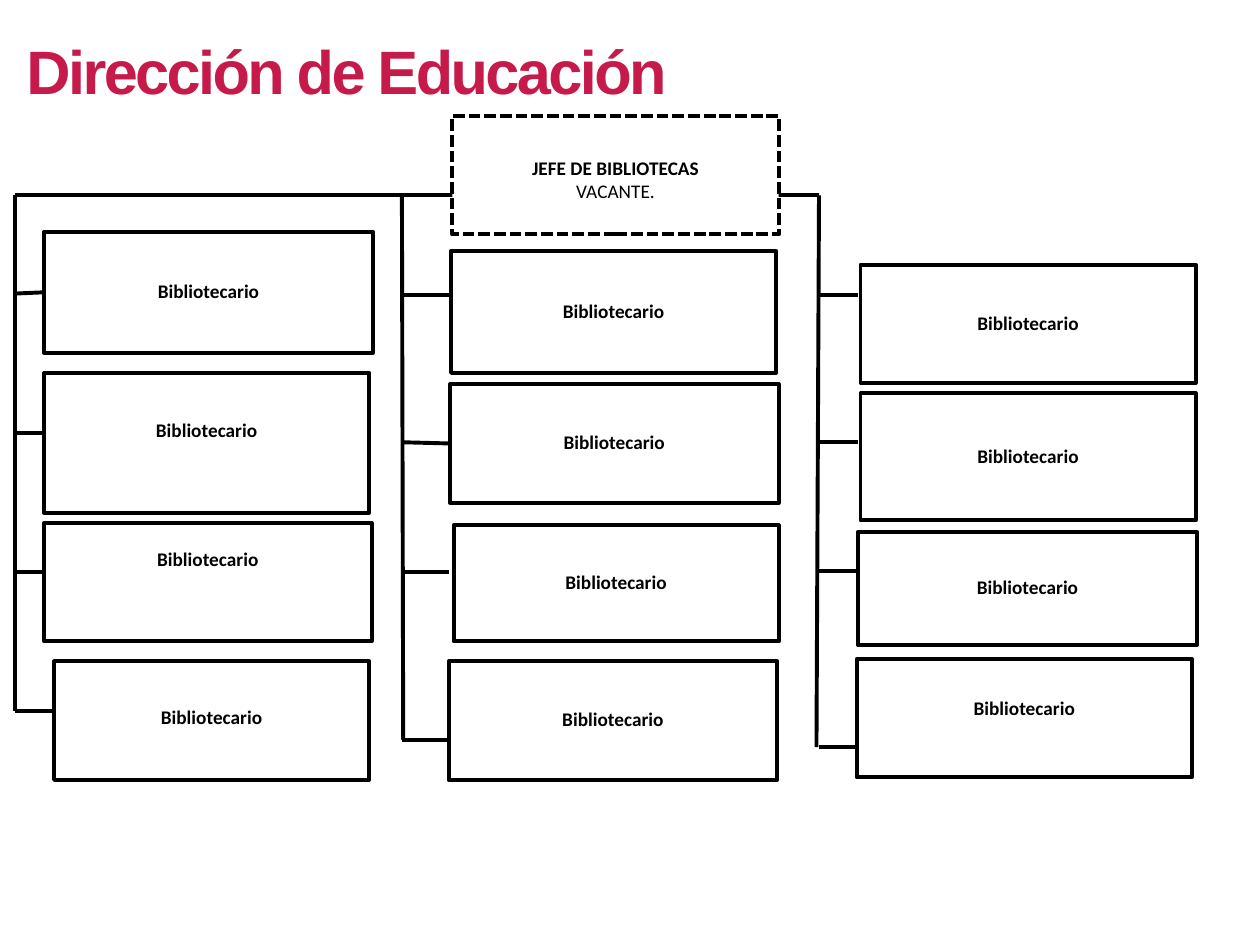
"""Build the organisation chart of the libraries in the education department."""
from dataclasses import dataclass

from lxml.etree import SubElement
from pptx import Presentation
from pptx.dml.color import RGBColor
from pptx.enum.dml import MSO_LINE_DASH_STYLE as Dash
from pptx.enum.shapes import MSO_CONNECTOR as Connector, MSO_SHAPE as Shape
from pptx.enum.text import MSO_ANCHOR as Anchor, MSO_AUTO_SIZE as AutoSize, PP_ALIGN as Align
from pptx.oxml.ns import qn
from pptx.util import Inches, Pt

COLORS = {"title": "C51A4A", "ink": "000000", "paper": "FFFFFF"}
LINE_WIDTH = Pt(2.25)
BUS_Y = 1.55
JOIN_TOLERANCE = 0.02


@dataclass(frozen=True)
class Box:
    """A post; lift raises its text and branch_y is the height of its branch."""
    left: float
    top: float
    width: float
    height: float
    branch_y: float = BUS_Y
    lift: float = 0
    lines: tuple[str, ...] = ("Bibliotecario",)
    spacing: float = 0.9
    dashed: bool = False


@dataclass(frozen=True)
class Column:
    """A vertical trunk with a branch to each of its boxes."""
    trunk_x: float
    trunk_end_x: float
    branch_end_x: float
    boxes: tuple[Box, ...]


CHIEF = Box(3.59, 0.92, 2.59, 0.94, lift=-0.03, spacing=1.0, dashed=True,
            lines=("JEFE DE BIBLIOTECAS", "VACANTE."))
COLUMNS = (
    Column(0.12, 0.12, 0.43, (
        Box(0.35, 1.84, 2.61, 0.96, 2.33),
        Box(0.35, 2.96, 2.58, 1.11, 3.44, lift=0.09),
        Box(0.35, 4.15, 2.60, 0.94, 4.54, lift=0.17),
        Box(0.43, 5.25, 2.50, 0.94, 5.64, lift=0.02),
    )),
    Column(3.19, 3.20, 3.56, (
        Box(3.58, 1.99, 2.58, 0.97, 2.34),
        Box(3.57, 3.05, 2.61, 0.94, 3.51),
        Box(3.60, 4.17, 2.58, 0.92, 4.54),
        Box(3.56, 5.25, 2.61, 0.94, 5.87),
    )),
    Column(6.50, 6.48, 6.81, (
        Box(6.83, 2.10, 2.66, 0.94, 2.34),
        Box(6.83, 3.12, 2.66, 1.01, 3.51),
        Box(6.81, 4.22, 2.69, 0.90, 4.53),
        Box(6.80, 5.23, 2.66, 0.94, 5.93, lift=0.07),
    )),
)


def color(name: str) -> RGBColor:
    """Return a named colour."""
    return RGBColor.from_string(COLORS[name])


def draw_line(page, start: tuple[float, float], end: tuple[float, float]):
    """Draw a straight line without a shadow."""
    line = page.shapes.add_connector(
        Connector.STRAIGHT, *(Inches(value) for value in start + end))
    line.line.color.rgb = color("ink")
    line.line.width = LINE_WIDTH
    SubElement(line._element.spPr, qn("a:effectLst"))
    return line


def draw_box(page, box: Box):
    """Draw a post with its first line in bold."""
    shape = page.shapes.add_shape(
        Shape.RECTANGLE, Inches(box.left), Inches(box.top),
        Inches(box.width), Inches(box.height))
    shape.shadow.inherit = False
    shape.fill.solid()
    shape.fill.fore_color.rgb = color("paper")
    shape.line.color.rgb = color("ink")
    shape.line.width = LINE_WIDTH
    if box.dashed:
        shape.line.dash_style = Dash.SQUARE_DOT
    frame = shape.text_frame
    frame.word_wrap = False
    frame.vertical_anchor = Anchor.MIDDLE
    frame.margin_top = Inches(0.05 + max(0, -2 * box.lift))
    frame.margin_bottom = Inches(0.05 + max(0, 2 * box.lift))
    frame.text = "\n".join(box.lines)
    for index, para in enumerate(frame.paragraphs):
        para.alignment = Align.CENTER
        para.line_spacing = box.spacing
        font = para.runs[0].font
        font.name = "Calibri"
        font.size = Pt(11)
        font.bold = index == 0
        font.color.rgb = color("ink")
    return shape


def draw_column(page, column: Column) -> None:
    """Draw a trunk, its branches and its boxes."""
    last_y = column.boxes[-1].branch_y
    draw_line(page, (column.trunk_x, BUS_Y), (column.trunk_end_x, last_y))
    for box in column.boxes:
        branch = draw_line(page, (column.trunk_x, box.branch_y),
                           (column.branch_end_x, box.branch_y))
        shape = draw_box(page, box)
        if abs(box.top + box.height / 2 - box.branch_y) <= JOIN_TOLERANCE:
            branch.end_connect(shape, 1)


def draw_title(page, text: str) -> None:
    """Place and format the title."""
    title = page.shapes.title
    title.left, title.top = Inches(0.11), Inches(0.21)
    title.width, title.height = Inches(6.81), Inches(0.69)
    frame = title.text_frame
    frame.text = text
    frame.word_wrap = True
    frame.auto_size = AutoSize.SHAPE_TO_FIT_TEXT
    frame.vertical_anchor = Anchor.TOP
    para = frame.paragraphs[0]
    para.alignment = Align.LEFT
    span = para.runs[0]
    span.font.name = "Arial"
    span.font.size = Pt(35)
    span.font.bold = True
    span.font.color.rgb = color("title")
    span.font._element.set("spc", "-150")


def main() -> None:
    """Build and save the deck."""
    deck = Presentation()
    deck.slide_width, deck.slide_height = Inches(10), Inches(7.5)
    page = deck.slides.add_slide(deck.slide_layouts[5])
    draw_title(page, "Dirección de Educación")
    draw_line(page, (COLUMNS[0].trunk_x, BUS_Y), (COLUMNS[-1].trunk_x, BUS_Y))
    for column in COLUMNS:
        draw_column(page, column)
    draw_box(page, CHIEF)
    deck.save("out.pptx")


if __name__ == "__main__":
    main()
